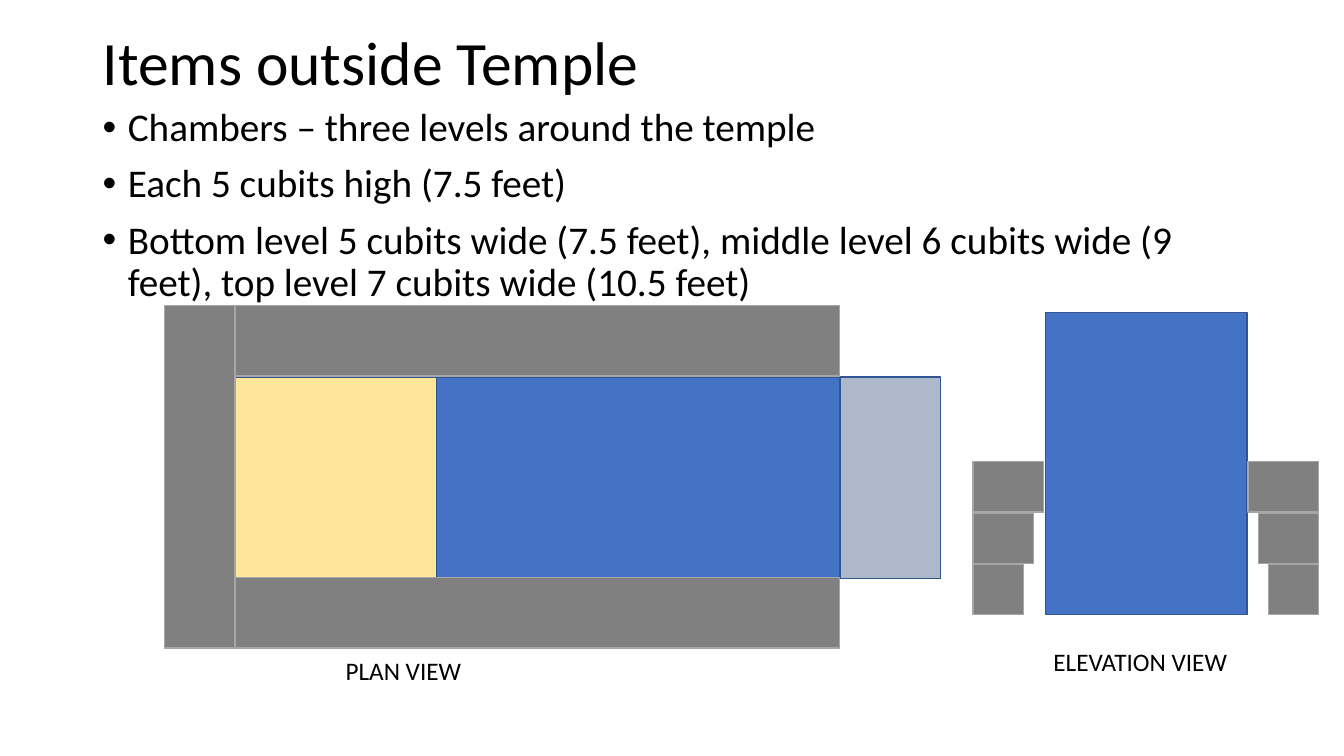
from lxml.etree import SubElement
from pptx import Presentation
from pptx.dml.color import RGBColor
from pptx.enum.shapes import MSO_SHAPE
from pptx.enum.text import MSO_ANCHOR, MSO_AUTO_SIZE, PP_ALIGN
from pptx.oxml.ns import qn
from pptx.util import Inches, Pt

BLUE, BLUE_EDGE = "4472C4", "325491"
GRAY, GRAY_EDGE = "808080", "A6A6A6"
PORCH, INNER_ROOM = "ADB9CA", "FFE699"

presentation = Presentation()
presentation.slide_width = Inches(13.33)
presentation.slide_height = Inches(7.5)
slide = presentation.slides.add_slide(presentation.slide_layouts[5])


def add_block(left, top, width, height, fill, edge):
    block = slide.shapes.add_shape(
        MSO_SHAPE.RECTANGLE, Inches(left), Inches(top), Inches(width), Inches(height))
    block.shadow.inherit = False
    block.fill.solid()
    block.fill.fore_color.rgb = RGBColor.from_string(fill)
    block.line.color.rgb = RGBColor.from_string(edge)
    block.line.width = Pt(1)


def write(paragraph, text, size):
    run = paragraph.add_run()
    run.text = text
    run.font.name = "Calibri"
    run.font.size = Pt(size)
    run.font.color.rgb = RGBColor.from_string("000000")


# Heading
title = slide.shapes.title
title.left, title.top = Inches(0.92), Inches(-0.07)
title.width, title.height = Inches(11.5), Inches(1.45)
title.text_frame.auto_size = MSO_AUTO_SIZE.NONE
title.text_frame.vertical_anchor = MSO_ANCHOR.MIDDLE
heading = title.text_frame.paragraphs[0]
heading.alignment = PP_ALIGN.LEFT
heading.line_spacing = 0.9
write(heading, "Items outside Temple", 44)

# Chamber facts
facts = slide.shapes.add_textbox(
    Inches(0.92), Inches(1.02), Inches(11.5), Inches(5.73)).text_frame
facts.word_wrap = True
for index, fact in enumerate([
    "Chambers – three levels around the temple",
    "Each 5 cubits high (7.5 feet)",
    "Bottom level 5 cubits wide (7.5 feet), middle level 6 cubits wide (9 feet), "
    "top level 7 cubits wide (10.5 feet)",
]):
    bullet = facts.add_paragraph() if index else facts.paragraphs[0]
    bullet.line_spacing = 0.9
    bullet.space_before = Pt(10)
    properties = bullet._p.get_or_add_pPr()
    properties.set("marL", str(Inches(0.25)))
    properties.set("indent", str(-Inches(0.25)))
    SubElement(properties, qn("a:buFont"), typeface="Arial")
    SubElement(properties, qn("a:buChar"), char="•")
    write(bullet, fact, 28)

# Plan view: ten cubits to the inch
temple_left, temple_top, temple_length, temple_width = 2.33, 3.74, 6, 2
chamber_depth = 0.7
chambers_top = 3.03
add_block(temple_left, temple_top, temple_length, temple_width, BLUE, BLUE_EDGE)
add_block(temple_left + temple_length, temple_top, 1, temple_width, PORCH, BLUE_EDGE)
add_block(temple_left, temple_top, 2, temple_width, INNER_ROOM, BLUE_EDGE)
for side_top in (chambers_top, chambers_top + chamber_depth + temple_width):
    add_block(temple_left, side_top, temple_length, chamber_depth, GRAY, GRAY_EDGE)
add_block(temple_left - chamber_depth, chambers_top, chamber_depth,
          temple_width + 2 * chamber_depth, GRAY, GRAY_EDGE)

# Elevation view: chambers widen by one cubit per level
add_block(10.37, 3.1, temple_width, 3, BLUE, BLUE_EDGE)
outer_left, outer_right, ground_level_top = 9.65, 13.08, 5.6
for level in range(3):
    width = 0.5 + 0.1 * level
    level_top = ground_level_top - 0.51 * level
    for left in (outer_right - width, outer_left):
        add_block(left, level_top, width, 0.5, GRAY, GRAY_EDGE)

# View captions
for caption, left, top in (("PLAN VIEW", 3.33, 6.45), ("ELEVATION VIEW", 10.35, 6.36)):
    label = slide.shapes.add_textbox(
        Inches(left), Inches(top), Inches(2.73), Inches(0.4)).text_frame
    label.word_wrap = True
    label.auto_size = MSO_AUTO_SIZE.SHAPE_TO_FIT_TEXT
    write(label.paragraphs[0], caption, 18)

presentation.save("out.pptx")
